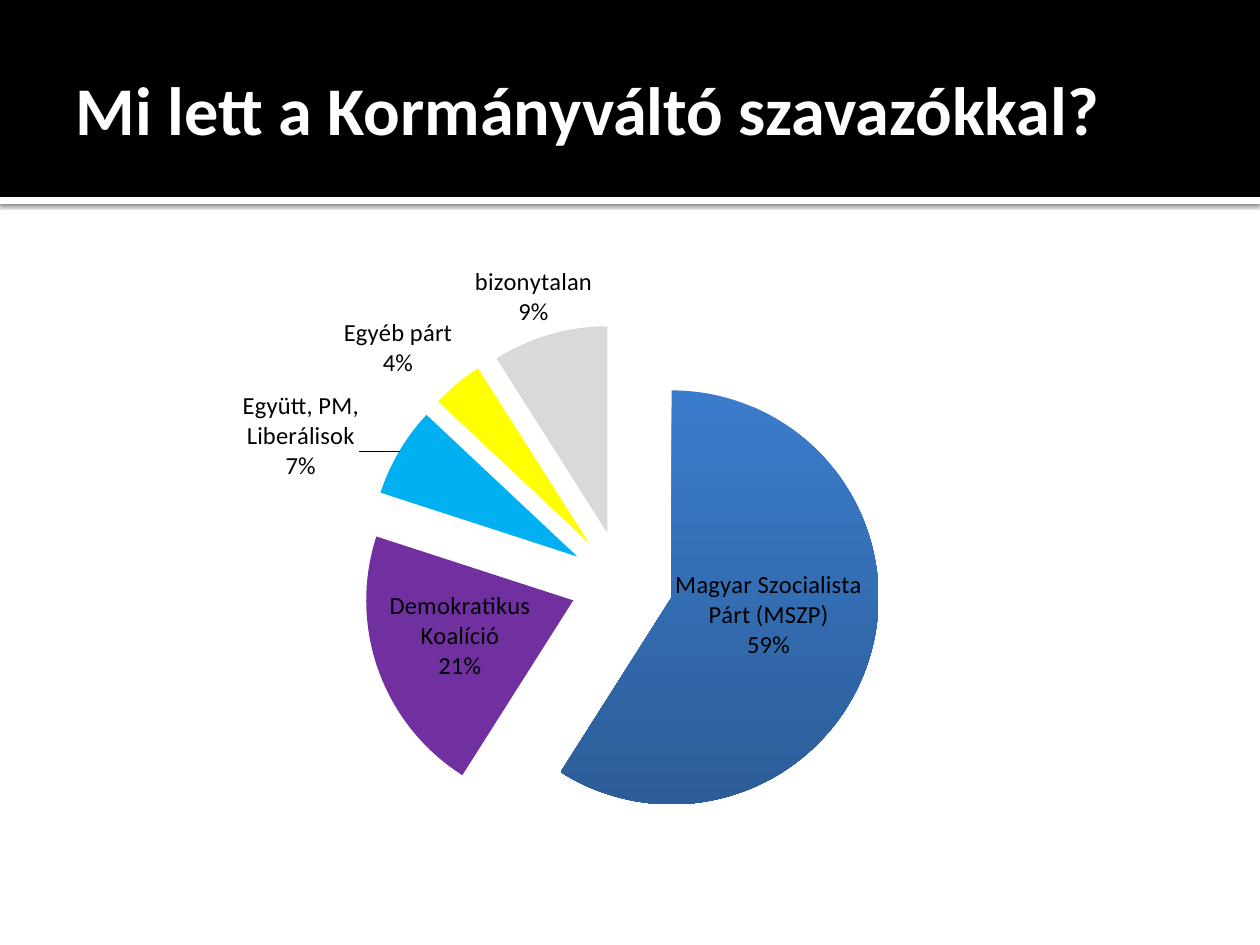
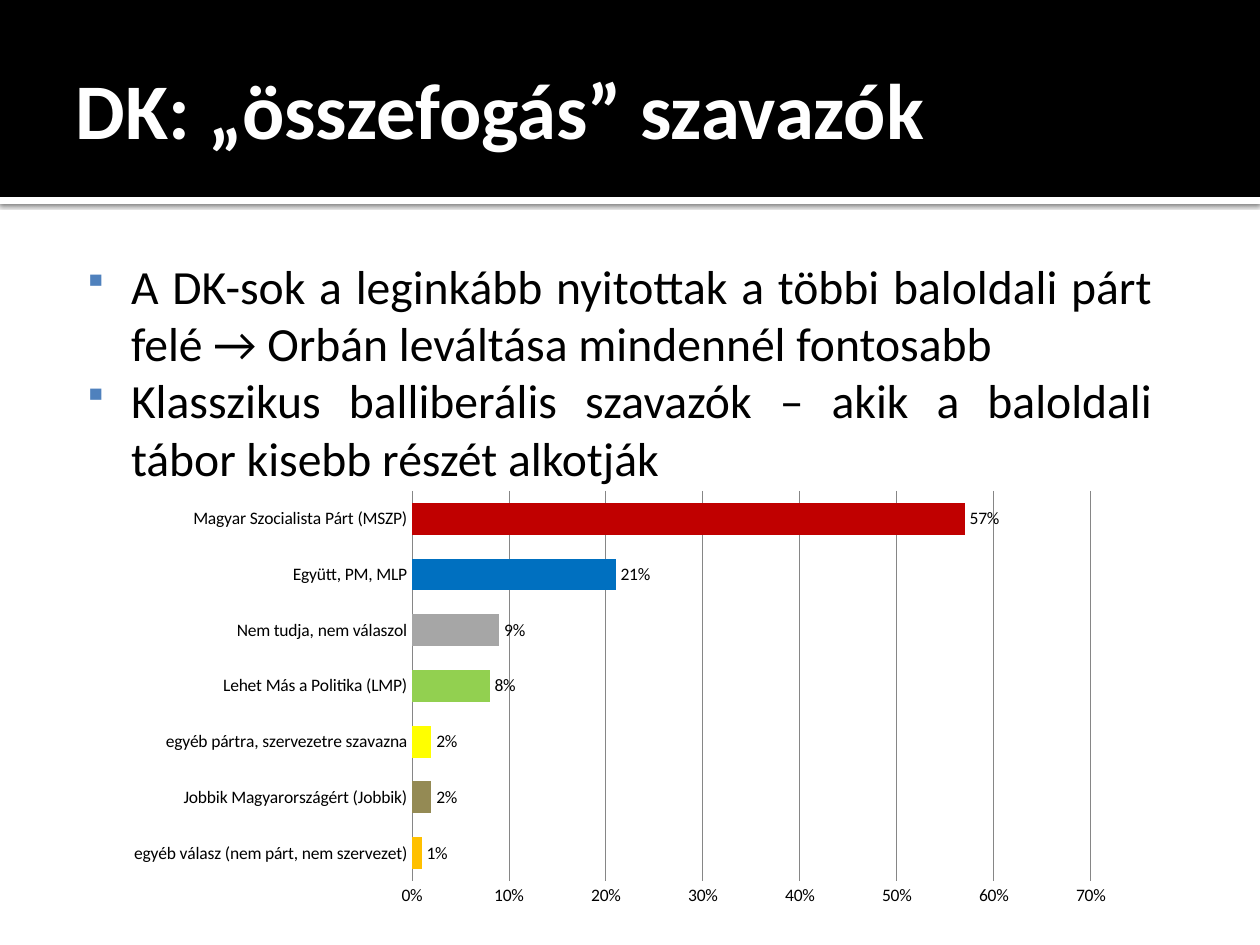
from lxml import etree
from pptx import Presentation
from pptx.chart.data import CategoryChartData
from pptx.dml.color import RGBColor
from pptx.enum.chart import XL_CHART_TYPE as ChartType
from pptx.enum.chart import XL_LABEL_POSITION as LabelPosition
from pptx.enum.chart import XL_TICK_MARK as TickMark
from pptx.enum.shapes import MSO_SHAPE as Preset
from pptx.enum.text import MSO_ANCHOR as Anchor
from pptx.enum.text import PP_ALIGN as Align
from pptx.oxml import parse_xml
from pptx.oxml.ns import nsdecls, qn
from pptx.util import Pt

FONT = "Calibri"
BLACK, WHITE, BLUE, GRID = "000000", "FFFFFF", "4F81BD", "868686"
SLIDE_SIZE = (1260, 945)
HEADER_BOX = (0, 0, 1260, 197)
RULE_BOX = (0, 197, 1260, 7)
TITLE_BOX = (63, 22, 1134, 173)

PIE_TITLE = ("Mi lett a Kormányváltó szavazókkal?", 39)
PIE_BOX = (63, 244, 1134, 638)
PIE_PLOT = (415, 376, 414, 414)
PIE_GRADIENT = ("3A7CCB", "2C5D98")
PIE_SLICES = [
    ("Magyar Szocialista Párt (MSZP)", 59, BLUE),
    ("Demokratikus Koalíció", 21, "7030A0"),
    ("Együtt, PM, Liberálisok", 7, "00B0F0"),
    ("Egyéb párt", 4, "FFFF00"),
    ("bizonytalan", 9, "D9D9D9"),
]

BAR_TITLE = ("DK: „összefogás” szavazók", 45)
BULLETS_BOX = (63, 244, 1103, 218)
BULLETS = [
    "A DK-sok a leginkább nyitottak a többi baloldali párt felé → Orbán leváltása mindennél fontosabb",
    "Klasszikus balliberális szavazók – akik a baloldali tábor kisebb részét alkotják",
]
BAR_BOX = (115, 483, 1012, 432)
BAR_PLOT = (412, 491, 679, 390)
BARS = [
    ("egyéb válasz (nem párt, nem szervezet)", 0.01, "FFC000"),
    ("Jobbik Magyarországért (Jobbik)", 0.02, "948A54"),
    ("egyéb pártra, szervezetre szavazna", 0.02, "FFFF00"),
    ("Lehet Más a Politika (LMP)", 0.08, "92D050"),
    ("Nem tudja, nem válaszol", 0.09, "A6A6A6"),
    ("Együtt, PM, MLP", 0.21, "0070C0"),
    ("Magyar Szocialista Párt (MSZP)", 0.57, "C00000"),
]


def px(length):
    return round(length * 914400 / 126)


def box_emu(box):
    return [px(length) for length in box]


def color(value):
    return RGBColor.from_string(value)


def set_font(font, size, value, bold=False):
    font.name, font.size, font.bold = FONT, Pt(size), bold
    font.color.rgb = color(value)


def add_band(slide, box, fill):
    shape = slide.shapes.add_shape(Preset.RECTANGLE, *box_emu(box))
    shape.shadow.inherit = False
    shape.fill.solid()
    shape.fill.fore_color.rgb = color(fill)
    shape.line.fill.background()
    return shape


def add_text(slide, box, insets):
    shape = slide.shapes.add_textbox(*box_emu(box))
    frame = shape.text_frame
    frame.word_wrap = True
    (frame.margin_left, frame.margin_top,
     frame.margin_right, frame.margin_bottom) = box_emu(insets)
    return frame


def add_titled_slide(presentation, title, size):
    slide = presentation.slides.add_slide(presentation.slide_layouts[6])
    rule = add_band(slide, RULE_BOX, WHITE)
    effects = rule._element.spPr.find(qn("a:effectLst"))
    effects.append(parse_xml(
        f'<a:outerShdw {nsdecls("a")} blurRad="31750" dist="10160" dir="5400000" rotWithShape="0">'
        f'<a:srgbClr val="{BLACK}"><a:alpha val="60000"/></a:srgbClr></a:outerShdw>'))
    add_band(slide, HEADER_BOX, BLACK)
    frame = add_text(slide, TITLE_BOX, (13, 6, 6, 6))
    frame.vertical_anchor = Anchor.MIDDLE
    frame.text = title
    set_font(frame.paragraphs[0].runs[0].font, size, WHITE, True)
    return slide


def add_bullets(slide):
    frame = add_text(slide, BULLETS_BOX, (8, 13, 13, 6))
    for index, text in enumerate(BULLETS):
        paragraph = frame.add_paragraph() if index else frame.paragraphs[0]
        paragraph.text = text
        paragraph.alignment = Align.JUSTIFY
        set_font(paragraph.runs[0].font, 27.2, BLACK)
        properties = paragraph._p.get_or_add_pPr()
        properties.set("marL", str(px(60)))
        properties.set("indent", str(px(-44)))
        bullet_color = etree.SubElement(properties, qn("a:buClr"))
        etree.SubElement(bullet_color, qn("a:srgbClr"), val=BLUE)
        etree.SubElement(properties, qn("a:buSzPct"), val="80000")
        etree.SubElement(properties, qn("a:buFont"), typeface="Wingdings", charset="2")
        etree.SubElement(properties, qn("a:buChar"), char="§")


def set_plot_box(chart, chart_box, plot_box):
    left, top, width, height = chart_box
    plot_left, plot_top, plot_width, plot_height = plot_box
    shares = {
        "x": (plot_left - left) / width,
        "y": (plot_top - top) / height,
        "w": plot_width / width,
        "h": plot_height / height,
    }
    area = chart._chartSpace.chart.plotArea
    for old in area.findall(qn("c:layout")):
        area.remove(old)
    layout = etree.Element(qn("c:layout"))
    area.insert(0, layout)
    manual = etree.SubElement(layout, qn("c:manualLayout"))
    etree.SubElement(manual, qn("c:layoutTarget"), val="inner")
    for name in "xy":
        etree.SubElement(manual, qn(f"c:{name}Mode"), val="edge")
    for name, share in shares.items():
        etree.SubElement(manual, qn(f"c:{name}"), val=f"{share:.4f}")


def add_chart(slide, kind, rows, box, plot_box, number_format, label_size):
    data = CategoryChartData(number_format=number_format)
    data.categories = [name for name, _, _ in rows]
    data.add_series("Series 1", [value for _, value, _ in rows])
    chart = slide.shapes.add_chart(kind, *box_emu(box), data).chart
    chart.has_legend = False
    chart.has_title = False
    set_font(chart.font, 10, BLACK)
    set_plot_box(chart, box, plot_box)
    plot = chart.plots[0]
    plot.vary_by_categories = kind == ChartType.PIE
    for index, (_, _, fill) in enumerate(rows):
        point_fill = plot.series[0].points[index].format.fill
        point_fill.solid()
        point_fill.fore_color.rgb = color(fill)
    plot.has_data_labels = True
    labels = plot.data_labels
    labels.number_format = "0%"
    labels.number_format_is_linked = False
    set_font(labels.font, label_size, BLACK)
    return chart


def add_pie(slide):
    chart = add_chart(slide, ChartType.PIE, PIE_SLICES, PIE_BOX, PIE_PLOT, "0", 14)
    plot = chart.plots[0]
    labels = plot.data_labels
    labels.show_value = False
    labels.show_category_name = True
    labels.show_percentage = True
    labels.position = LabelPosition.BEST_FIT
    separator = etree.Element(qn("c:separator"))
    separator.text = "\n"
    labels._element.find(qn("c:showBubbleSize")).addnext(separator)
    series = plot.series[0]
    for point in series._element.findall(qn("c:dPt")):
        explosion = etree.Element(qn("c:explosion"), val="25")
        point.find(qn("c:spPr")).addprevious(explosion)
    fill = series.points[0].format.fill
    fill.gradient()
    fill.gradient_angle = 270
    for stop, value in zip(fill.gradient_stops, PIE_GRADIENT):
        stop.color.rgb = color(value)


def add_bars(slide):
    chart = add_chart(slide, ChartType.BAR_CLUSTERED, BARS, BAR_BOX, BAR_PLOT, "0%", 10)
    plot = chart.plots[0]
    plot.gap_width = 75
    plot.overlap = -25
    plot.data_labels.show_value = True
    plot.data_labels.position = LabelPosition.OUTSIDE_END
    names, values = chart.category_axis, chart.value_axis
    for axis in (names, values):
        axis.major_tick_mark = axis.minor_tick_mark = TickMark.NONE
        set_font(axis.tick_labels.font, 10, BLACK)
    names.has_major_gridlines = False
    values.has_major_gridlines = True
    values.minimum_scale, values.maximum_scale, values.major_unit = 0, 0.7, 0.1
    values.tick_labels.number_format = "0%"
    values.tick_labels.number_format_is_linked = False
    values.format.line.fill.background()
    for line in (names.format.line, values.major_gridlines.format.line):
        line.color.rgb = color(GRID)
        line.width = Pt(0.5)


def main():
    presentation = Presentation()
    presentation.slide_width, presentation.slide_height = box_emu(SLIDE_SIZE)
    add_pie(add_titled_slide(presentation, *PIE_TITLE))
    bar_slide = add_titled_slide(presentation, *BAR_TITLE)
    add_bullets(bar_slide)
    add_bars(bar_slide)
    presentation.save("out.pptx")


if __name__ == "__main__":
    main()
